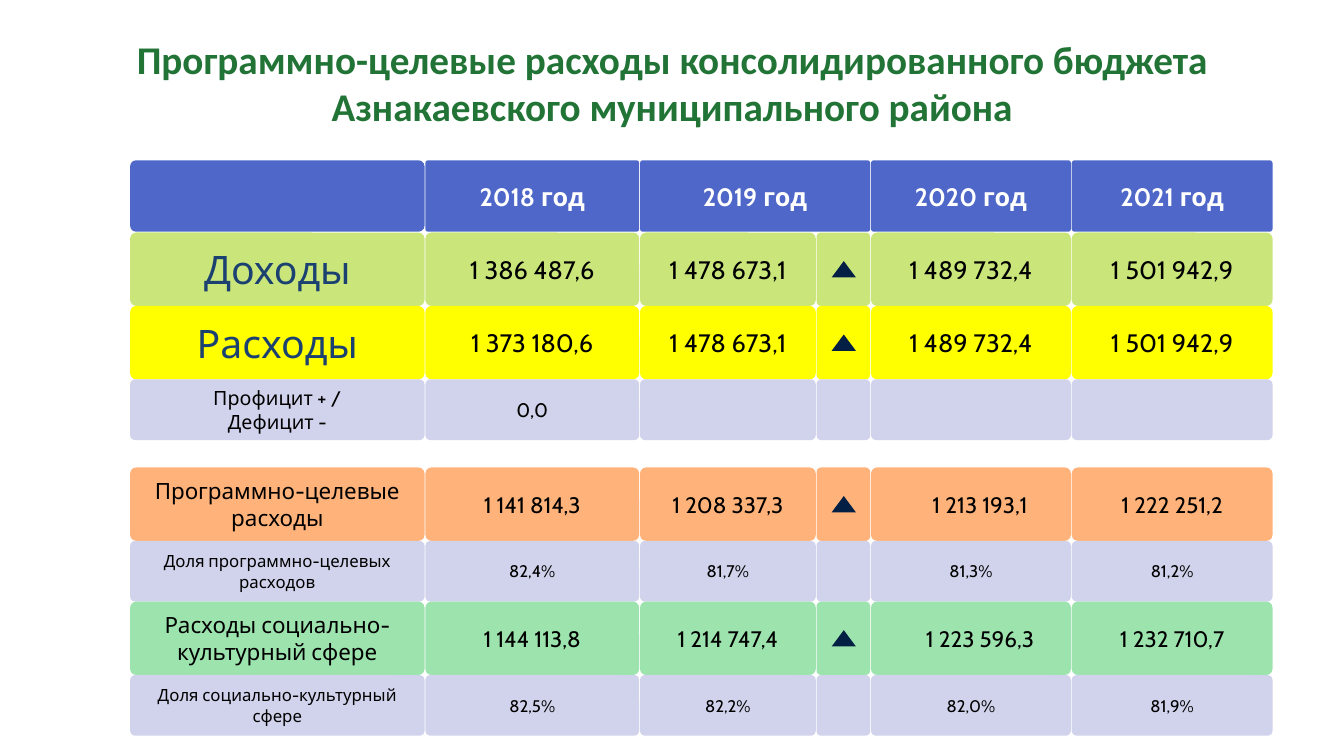
import pptx
import pptx.util
import pptx.dml.color
import pptx.enum.shapes
import pptx.enum.text

Cm = pptx.util.Cm
RGBColor = pptx.dml.color.RGBColor
SHAPE = pptx.enum.shapes.MSO_SHAPE

TITLE_GREEN = RGBColor(0x21, 0x74, 0x36)
HEADER_BLUE = RGBColor(0x4E, 0x67, 0xC8)
LABEL_BLUE = RGBColor(0x1B, 0x41, 0x71)
ARROW_NAVY = RGBColor(0x04, 0x1F, 0x44)
LIME = RGBColor(0xCA, 0xE6, 0x7B)
YELLOW = RGBColor(0xFF, 0xFF, 0x00)
LAVENDER = RGBColor(0xD0, 0xD3, 0xEB)
ORANGE = RGBColor(0xFF, 0xB3, 0x7A)
MINT = RGBColor(0x9D, 0xE3, 0xAE)
WHITE = RGBColor(0xFF, 0xFF, 0xFF)
BLACK = RGBColor(0x00, 0x00, 0x00)

COLUMN_WIDTHS = [7.44, 5.41, 4.45, 1.37, 5.06, 5.08]
HEADER_WIDTHS = [7.44, 5.41, 5.82, 5.06, 5.08]
HEADER_HEIGHT = 1.82
TALL, SHORT = 1.85, 1.53
SECTION_GAP = 0.69
SEAM = 0.02

BUDGET_ROWS = [
    dict(texts=["Доходы", "1 386 487,6", "1 478 673,1", "", "1 489 732,4", "1 501 942,9"],
         fill=LIME, height=TALL, size=18, label_size=28, label_color=LABEL_BLUE, grows=True),
    dict(texts=["Расходы", "1 373 180,6", "1 478 673,1", "", "1 489 732,4", "1 501 942,9"],
         fill=YELLOW, height=TALL, size=18, label_size=28, label_color=LABEL_BLUE, grows=True),
    dict(texts=["Профицит + /\nДефицит -", "0,0", "", "", "", ""],
         fill=LAVENDER, height=SHORT, size=14),
]
PROGRAM_ROWS = [
    dict(texts=["Программно-целевые расходы", "1 141 814,3", "1 208 337,3", "",
                "1 213 193,1", "1 222 251,2"],
         fill=ORANGE, height=TALL, size=16, grows=True, indent=0.46),
    dict(texts=["Доля программно-целевых расходов", "82,4%", "81,7%", "", "81,3%", "81,2%"],
         fill=LAVENDER, height=SHORT, size=12),
    dict(texts=["Расходы социально-культурный сфере", "1 144 113,8", "1 214 747,4", "",
                "1 223 596,3", "1 232 710,7"],
         fill=MINT, height=TALL, size=16, grows=True, indent=0.46),
    dict(texts=["Доля социально-культурный сфере", "82,5%", "82,2%", "", "82,0%", "81,9%"],
         fill=LAVENDER, height=SHORT, size=12),
]


def write_text(shape, text, size=18, color=BLACK, font="Cabin", bold=False):
    """Fill a shape with centred paragraphs, one for each line of text."""
    frame = shape.text_frame
    frame.text = text
    for paragraph in frame.paragraphs:
        paragraph.alignment = pptx.enum.text.PP_ALIGN.CENTER
        paragraph.font.size = pptx.util.Pt(size)
        paragraph.font.name = font
        paragraph.font.bold = bold
        paragraph.font.color.rgb = color


def add_filled_shape(slide, kind, left, top, width, height, fill):
    """Add a preset shape with a plain fill, no line and no shadow."""
    shape = slide.shapes.add_shape(kind, Cm(left), Cm(top), Cm(width), Cm(height))
    shape.fill.solid()
    shape.fill.fore_color.rgb = fill
    shape.line.fill.background()
    shape.shadow.inherit = False
    return shape


def add_cell(slide, left, top, width, height, fill, text, corner=0.083, indent=0, **text_format):
    """Add one rounded cell of the budget grid."""
    cell = add_filled_shape(slide, SHAPE.ROUNDED_RECTANGLE, left, top,
                            width - SEAM, height, fill)
    cell.adjustments[0] = corner
    if text:
        cell.text_frame.word_wrap = True
        cell.text_frame.vertical_anchor = pptx.enum.text.MSO_ANCHOR.MIDDLE
        cell.text_frame.margin_left = Cm(0.25 + indent)
        write_text(cell, text, **text_format)


def add_title(slide, left, top, width, height):
    """Add the two-line slide title."""
    title = slide.shapes.add_textbox(Cm(left), Cm(top), Cm(width), Cm(height))
    title.text_frame.word_wrap = False
    write_text(title, "Программно-целевые расходы консолидированного бюджета\n"
               "Азнакаевского муниципального района",
               size=28, color=TITLE_GREEN, font="Calibri", bold=True)


def add_header(slide, left, top):
    """Add the header row with the years."""
    years = ["", "2018 год", "2019 год", "2020 год", "2021 год"]
    for year, width in zip(years, HEADER_WIDTHS):
        add_cell(slide, left, top, width, HEADER_HEIGHT - SEAM, HEADER_BLUE, year,
                 corner=0.04 if year else 0.083, color=WHITE, bold=True)
        left += width


def add_growth_arrow(slide, left, top, width, height):
    """Add a triangle in the middle of the given cell box."""
    arrow_width, arrow_height = 0.61, 0.41
    add_filled_shape(slide, SHAPE.ISOSCELES_TRIANGLE, left + (width - arrow_width) / 2,
                     top + (height - arrow_height) / 2, arrow_width, arrow_height, ARROW_NAVY)


def add_row(slide, left, top, texts, fill, height, size, label_size=None,
            label_color=BLACK, grows=False, indent=0):
    """Add one row: a label, yearly values and a growth mark."""
    for column, (text, width) in enumerate(zip(texts, COLUMN_WIDTHS)):
        is_label = column == 0
        add_cell(slide, left, top, width, height, fill, text,
                 indent=indent if column == 4 else 0,
                 size=(label_size or size) if is_label else size,
                 color=label_color if is_label else BLACK)
        if column == 3 and grows:
            add_growth_arrow(slide, left, top, width, height)
        left += width


def add_section(slide, left, top, rows):
    """Stack rows from the given corner and return the bottom edge."""
    for row in rows:
        add_row(slide, left, top, **row)
        top += row["height"]
    return top


def main():
    """Build the slide and save it."""
    presentation = pptx.Presentation()
    presentation.slide_width = Cm(33.87)
    presentation.slide_height = Cm(19.05)
    slide = presentation.slides.add_slide(presentation.slide_layouts[6])
    left, top = 3.28, 4.04
    add_title(slide, 2.95, 0.76, 27.97, 2.64)
    add_header(slide, left, top)
    bottom = add_section(slide, left, top + HEADER_HEIGHT, BUDGET_ROWS)
    add_section(slide, left, bottom + SECTION_GAP, PROGRAM_ROWS)
    presentation.save("out.pptx")


if __name__ == "__main__":
    main()
